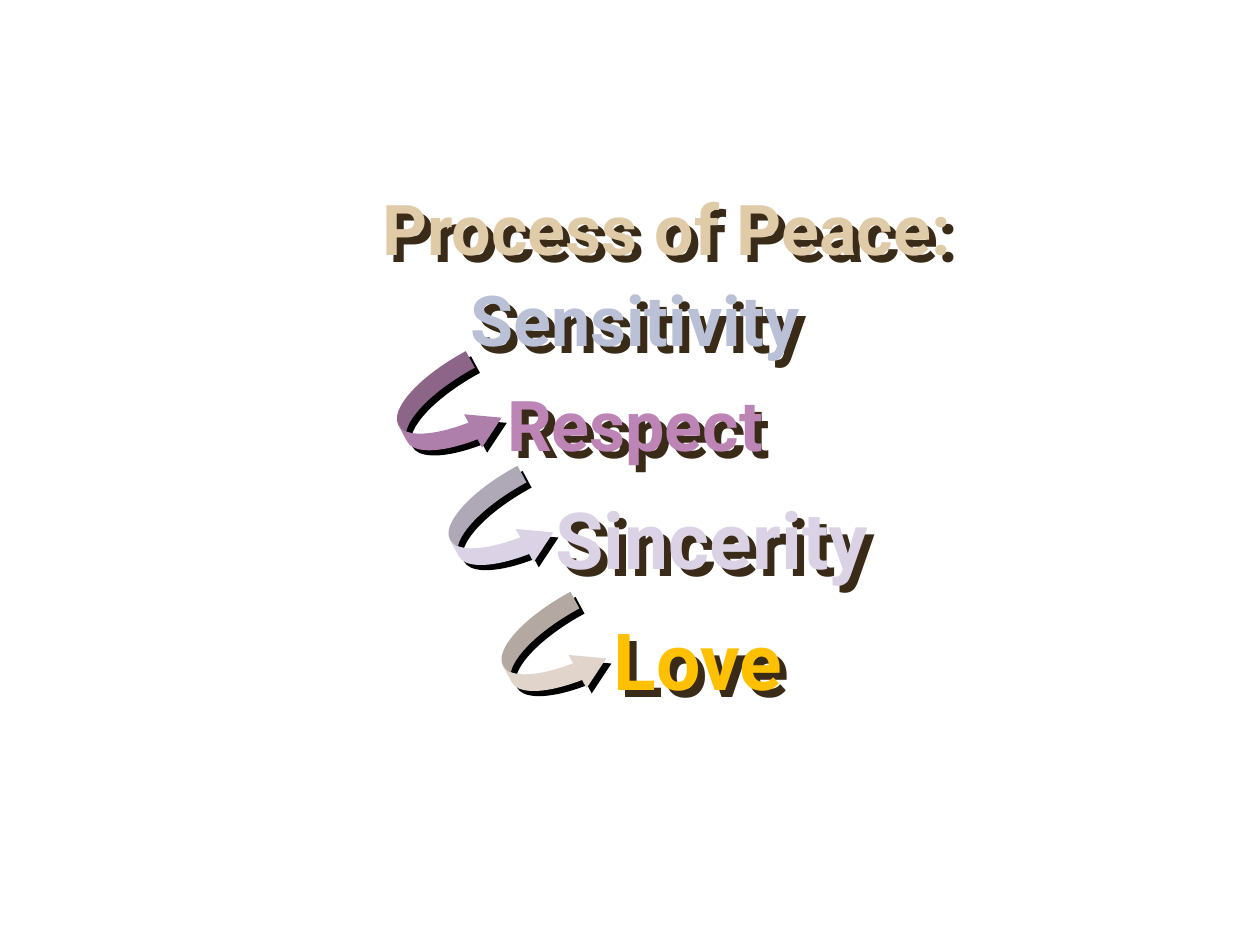
from pptx import Presentation
from pptx.dml.color import RGBColor
from pptx.enum.shapes import MSO_SHAPE
from pptx.enum.text import MSO_AUTO_SIZE, PP_ALIGN
from pptx.oxml.ns import qn
from pptx.util import Inches, Pt
from lxml.etree import SubElement

SAND = RGBColor(0xE0, 0xCB, 0xA8)
BLUE = RGBColor(0xBA, 0xC1, 0xD6)
PINK = RGBColor(0xBD, 0x85, 0xB5)
PLUM = RGBColor(0xAF, 0x7F, 0xAC)
LILAC = RGBColor(0xDB, 0xD3, 0xE5)
GOLD = RGBColor(0xFF, 0xC0, 0x00)
CREAM = RGBColor(0xE1, 0xD4, 0xCB)
BROWN = RGBColor(0x3A, 0x2A, 0x18)
BLACK = RGBColor(0, 0, 0)


class Board:
    font = "Roboto"
    angle = 45
    tilt = 331.7

    def __init__(self, slide):
        self.slide = slide

    def shade(self, shape, color, dist):
        shape.shadow.inherit = False
        effects = shape._element.spPr.find(qn("a:effectLst"))
        shadow = SubElement(effects, qn("a:outerShdw"), blurRad="0",
                            dist=str(Pt(dist)), dir=str(self.angle * 60000),
                            algn="ctr", rotWithShape="0")
        SubElement(shadow, qn("a:srgbClr"), val=str(color))

    def word(self, text, left, top, width, height, size, color):
        box = self.slide.shapes.add_textbox(
            Inches(left), Inches(top), Inches(width), Inches(height))
        self.shade(box, BROWN, 5.6)
        frame = box.text_frame
        frame.word_wrap = True
        frame.auto_size = MSO_AUTO_SIZE.SHAPE_TO_FIT_TEXT
        frame.text = text
        para = frame.paragraphs[0]
        para.alignment = PP_ALIGN.CENTER
        font = para.runs[0].font
        font.name = self.font
        font.size = Pt(size)
        font.bold = True
        font.color.rgb = color
        return para

    def step(self, text, left, top, height, size, color):
        para = self.word(text, left, top, 5.42, height, size, color)
        para.line_spacing = 0.85
        props = para._p.get_or_add_pPr()
        props.set("marL", str(Inches(0.06)))
        props.set("indent", str(Inches(-0.06)))

    def arrow(self, left, top, color):
        shape = self.slide.shapes.add_shape(
            MSO_SHAPE.CURVED_RIGHT_ARROW,
            Inches(left), Inches(top), Inches(0.75), Inches(0.75))
        for index, value in enumerate((0.2, 0.4, 0.333)):
            shape.adjustments[index] = value
        shape.rotation = self.tilt
        shape.fill.solid()
        shape.fill.fore_color.rgb = color
        shape.line.fill.background()
        self.shade(shape, BLACK, 4.2)


def main():
    deck = Presentation()
    deck.slide_width = Inches(10)
    deck.slide_height = Inches(7.5)
    board = Board(deck.slides.add_slide(deck.slide_layouts[6]))

    board.word("Process of Peace:", 1.83, 1.42, 6.92, 0.77, 40, SAND)
    for step in (
        ("Sensitivity", 2.33, 2.25, 0.67, 40, BLUE),
        ("Respect", 2.33, 3.08, 0.67, 40, PINK),
        ("Sincerity", 2.94, 3.96, 0.74, 45, LILAC),
        ("Love", 2.83, 4.92, 0.74, 45, GOLD),
    ):
        board.step(*step)
    for arrow in ((3.17, 2.92, PLUM), (3.58, 3.83, LILAC), (4, 4.83, CREAM)):
        board.arrow(*arrow)

    deck.save("out.pptx")


if __name__ == "__main__":
    main()
